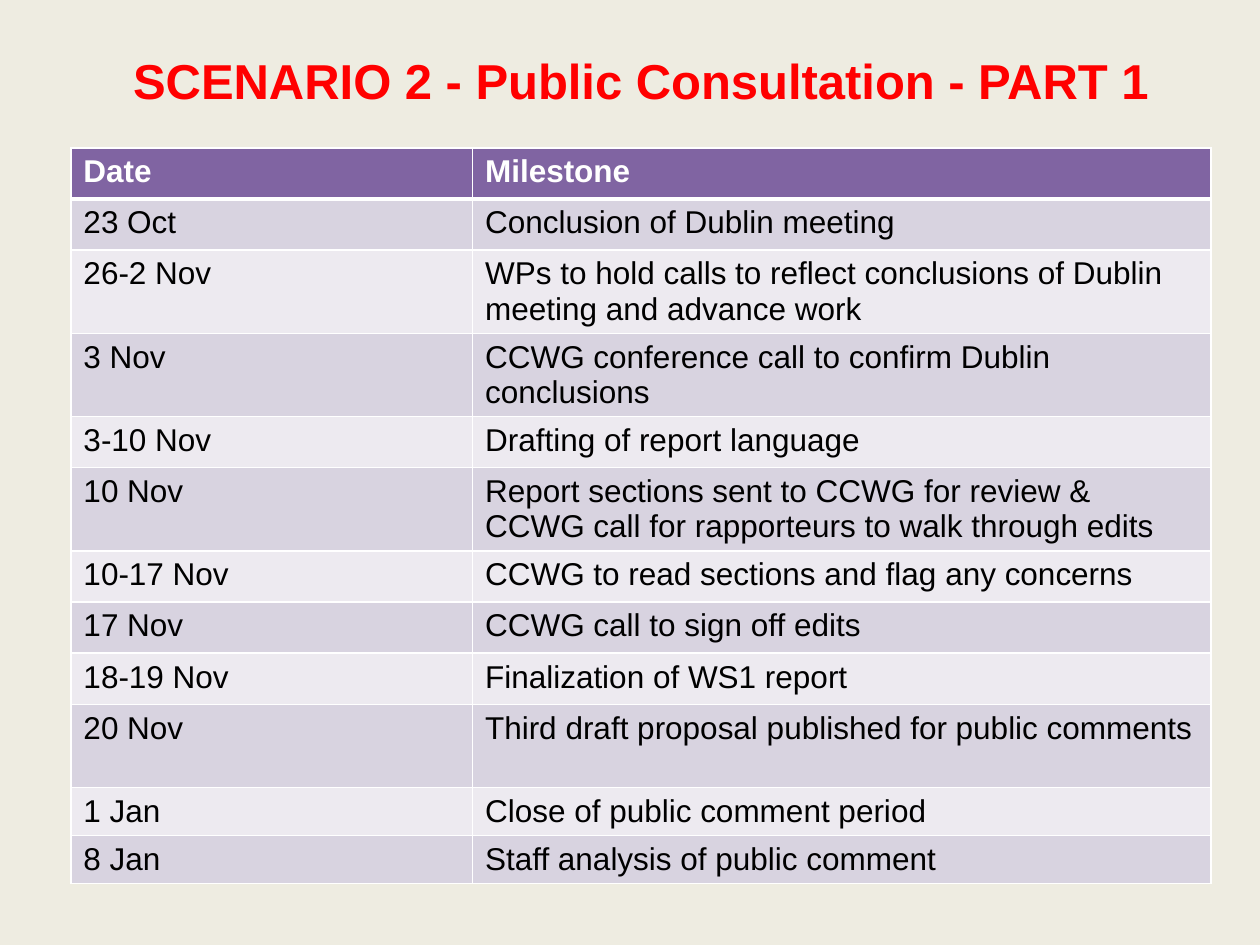
from lxml.etree import SubElement
from pptx import Presentation
from pptx.dml.color import RGBColor as RGB
from pptx.enum.text import MSO_ANCHOR as ANCHOR, PP_ALIGN as ALIGN
from pptx.oxml.ns import qn
from pptx.util import Pt

COLORS = {
    "background": "EEECE1", "title": "FF0000", "header": "8064A2",
    "odd": "D8D3E0", "even": "EDEAF0", "white": "FFFFFF", "text": "000000",
}
LEFT, WIDTH = 40.5, 651.5
COLUMNS = (229.5, 422)
TALL, NORMAL, SHORT = 47.6, 29.2, 27.4
ROWS = [
    ("Date", "Milestone", NORMAL),
    ("23 Oct", "Conclusion of Dublin meeting", NORMAL),
    ("26-2 Nov", "WPs to hold calls to reflect conclusions of Dublin meeting and advance work", TALL),
    ("3 Nov", "CCWG conference call to confirm Dublin conclusions", TALL),
    ("3-10 Nov", "Drafting of report language", NORMAL),
    ("10 Nov", "Report sections sent to CCWG for review & CCWG call for rapporteurs to walk through edits", TALL),
    ("10-17 Nov", "CCWG to read sections and flag any concerns", NORMAL),
    ("17 Nov", "CCWG call to sign off edits", NORMAL),
    ("18-19 Nov", "Finalization of WS1 report", NORMAL),
    ("20 Nov", "Third draft proposal published for public comments", TALL),
    ("1 Jan", "Close of public comment period", SHORT),
    ("8 Jan", "Staff analysis of public comment", SHORT),
]


def color(name):
    """Return the named colour."""
    return RGB.from_string(COLORS[name])


def add_run(p, text, size, name, bold=False):
    """Add one formatted run to a paragraph."""
    r = p.add_run()
    r.text = text
    r.font.name, r.font.size, r.font.bold = "Arial", Pt(size), bold
    r.font.color.rgb = color(name)


def set_title(s, text):
    """Place and fill the title placeholder."""
    sp = s.shapes.title
    sp.left, sp.top, sp.width, sp.height = Pt(LEFT), Pt(22.5), Pt(WIDTH), Pt(62)
    tf = sp.text_frame
    tf.word_wrap, tf.vertical_anchor, tf.margin_top = True, ANCHOR.TOP, Pt(6.5)
    p = tf.paragraphs[0]
    p.alignment = ALIGN.CENTER
    add_run(p, text, 28, "title", True)


def set_borders(cell, top, bottom):
    """Draw white cell borders, with the given top and bottom widths."""
    props = cell._tc.get_or_add_tcPr()
    for side, width in (("L", 1), ("R", 1), ("T", top), ("B", bottom)):
        line = SubElement(props, qn(f"a:ln{side}"), w=str(Pt(width)))
        fill = SubElement(line, qn("a:solidFill"))
        SubElement(fill, qn("a:srgbClr"), val=COLORS["white"])


def fill_cell(cell, text, row):
    """Write and format one cell according to its row."""
    header = row == 0
    set_borders(cell, 3 if row == 1 else 1, 3 if header else 1)
    cell.fill.solid()
    cell.fill.fore_color.rgb = color("header" if header else "odd" if row % 2 else "even")
    add_run(cell.text_frame.paragraphs[0], text, 18, "white" if header else "text", header)


def add_milestones(s):
    """Add the table of dates and milestones."""
    height = sum(row[-1] for row in ROWS)
    table = s.shapes.add_table(len(ROWS), len(COLUMNS), Pt(LEFT), Pt(84.5), Pt(WIDTH), Pt(height)).table
    for column, width in zip(table.columns, COLUMNS):
        column.width = Pt(width)
    for i, (*texts, row_height) in enumerate(ROWS):
        table.rows[i].height = Pt(row_height)
        for j, text in enumerate(texts):
            fill_cell(table.cell(i, j), text, i)


def main():
    """Build and save the slide."""
    prs = Presentation()
    prs.slide_width, prs.slide_height = Pt(720), Pt(540)
    s = prs.slides.add_slide(prs.slide_layouts[5])
    s.background.fill.solid()
    s.background.fill.fore_color.rgb = color("background")
    set_title(s, "SCENARIO 2 - Public Consultation - PART 1")
    add_milestones(s)
    prs.save("out.pptx")


if __name__ == "__main__":
    main()
